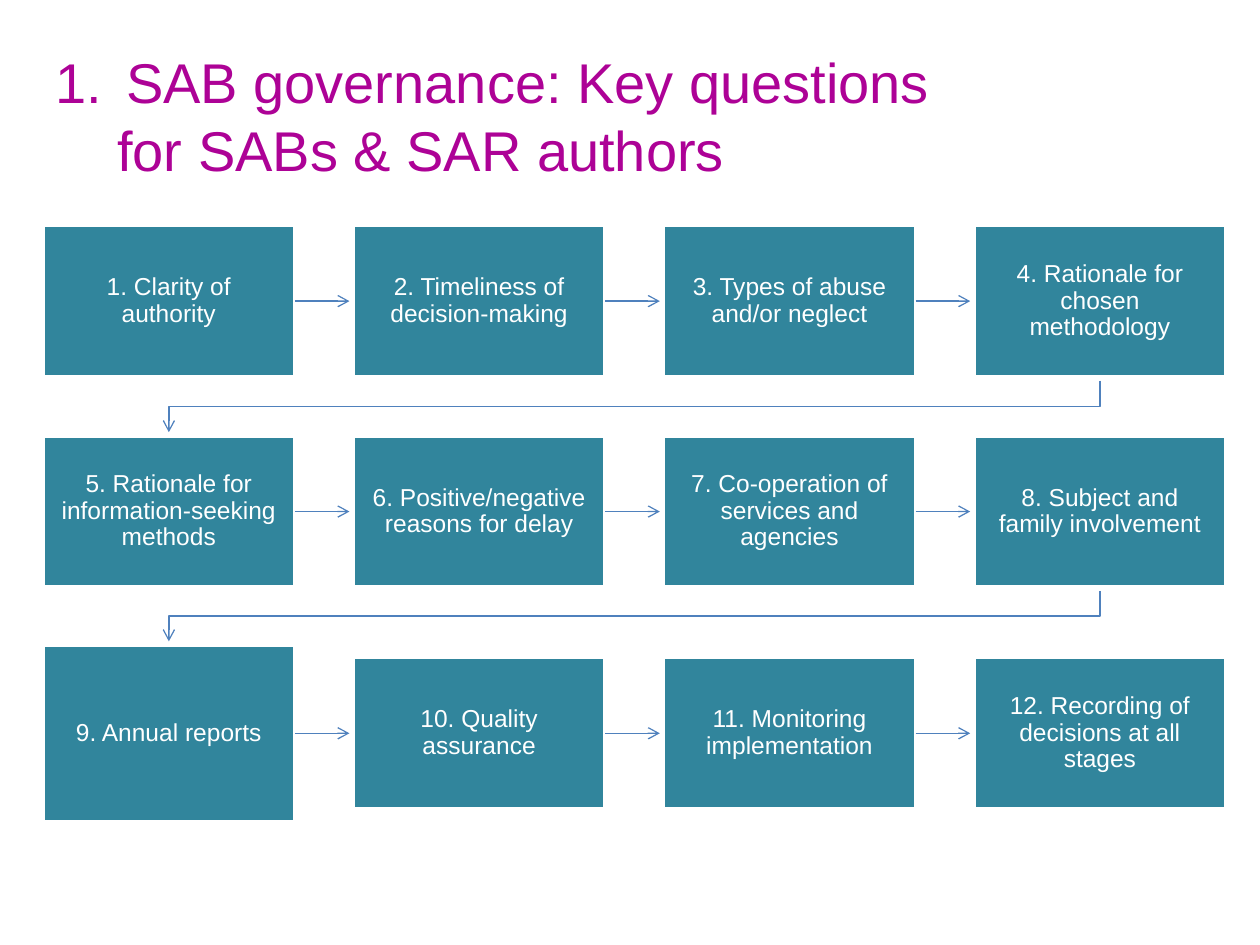
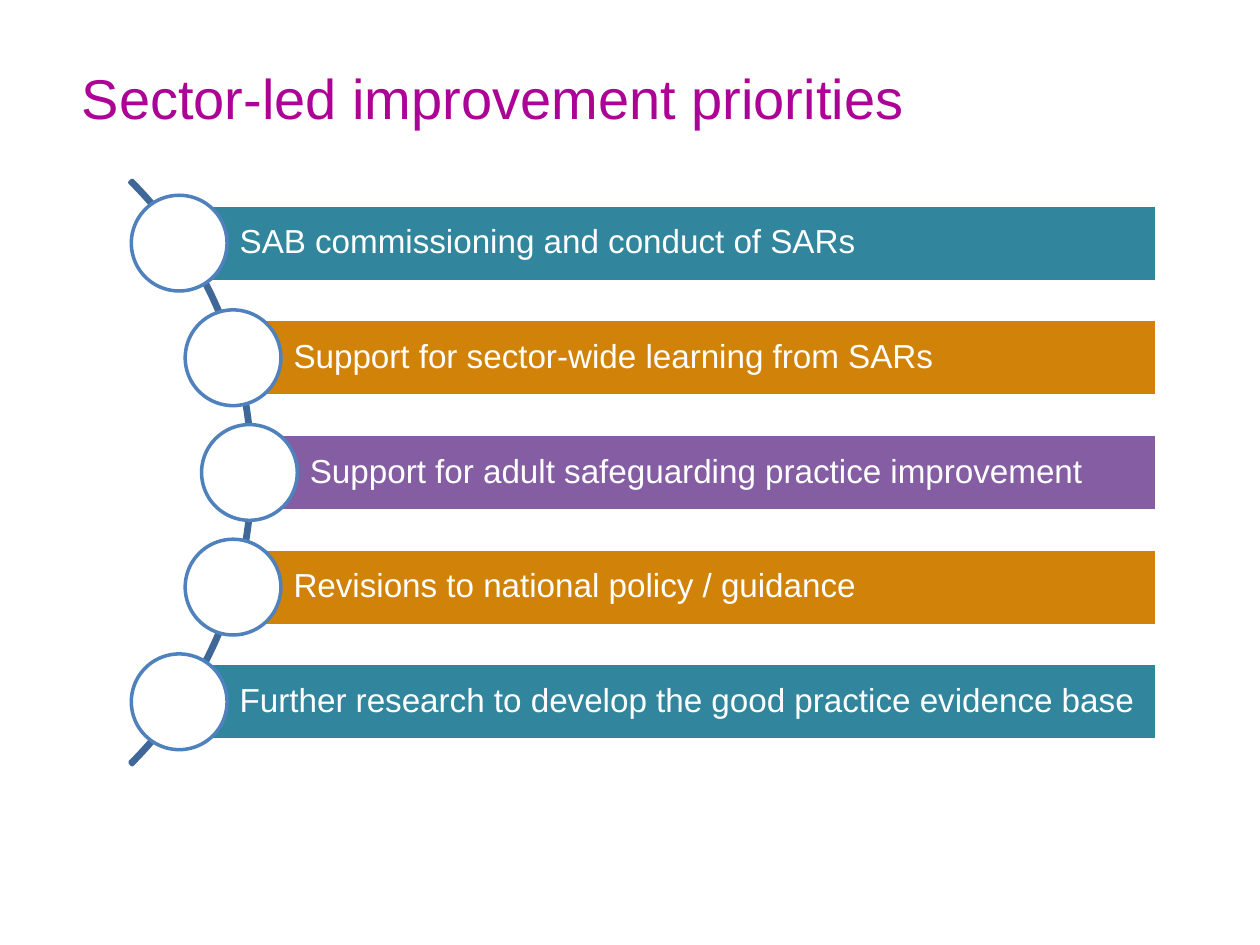
from math import sqrt
from lxml.etree import SubElement
from pptx import Presentation
from pptx.dml.color import RGBColor
from pptx.enum.shapes import MSO_CONNECTOR, MSO_SHAPE
from pptx.enum.text import MSO_ANCHOR, MSO_AUTO_SIZE, PP_ALIGN
from pptx.oxml.ns import qn
from pptx.util import Inches, Pt

FONT = "Arial"
WHITE, MAGENTA, BLUE, ARC_BLUE = "FFFFFF", "AD0296", "4F81BD", "3F6797"
TEAL, ORANGE, PURPLE = "31859C", "D18208", "845DA3"


def color(value):
    return RGBColor.from_string(value)


def style_text(paragraph, size, text_color, align=PP_ALIGN.LEFT, spacing=1.0):
    paragraph.alignment = align
    paragraph.line_spacing = spacing
    paragraph.font.name = FONT
    paragraph.font.size = Pt(size)
    paragraph.font.color.rgb = color(text_color)


deck = Presentation()
deck.slide_width, deck.slide_height = Inches(10), Inches(7.5)

titles = [
    ("SAB governance: Key questions\nfor SABs & SAR authors", 0.34, 0.33, 1.18),
    ("Sector-led improvement priorities", 0.55, 0.45, 0.64),
]
pages = []
for text, left, top, height in titles:
    page = deck.slides.add_slide(deck.slide_layouts[5])
    title = page.shapes.title
    title.left, title.top = Inches(left), Inches(top)
    title.width, title.height = Inches(8), Inches(height)
    frame = title.text_frame
    frame.text = text
    frame.word_wrap = True
    frame.auto_size = MSO_AUTO_SIZE.NONE
    frame.vertical_anchor = MSO_ANCHOR.TOP
    pages.append(page)

governance, priorities = pages

numbered, continued = governance.shapes.title.text_frame.paragraphs
properties = numbered._p.get_or_add_pPr()
properties.set("marL", str(Inches(0.56)))
properties.set("indent", str(Inches(-0.56)))
bullet_color = SubElement(properties, qn("a:buClr"))
SubElement(bullet_color, qn("a:srgbClr"), val=MAGENTA)
SubElement(properties, qn("a:buFont"), typeface=FONT)
SubElement(properties, qn("a:buAutoNum"), type="arabicPeriod")
continued._p.get_or_add_pPr().set("marL", str(Inches(0.49)))

for page in pages:
    for para in page.shapes.title.text_frame.paragraphs:
        style_text(para, 32, MAGENTA)

questions = [
    ["Clarity of authority", "Timeliness of decision-making",
     "Types of abuse and/or neglect", "Rationale for chosen methodology"],
    ["Rationale for information-seeking methods", "Positive/negative reasons for delay",
     "Co-operation of services and agencies", "Subject and family involvement"],
    ["Annual reports", "Quality assurance",
     "Monitoring implementation", "Recording of decisions at all stages"],
]
row_centers = [2.39, 4.06, 5.82]
first_left, column_step = 0.34, 7.39 / 3
box_width, box_height, tall_height = 2, 1.2, 1.4
arrow_gap = 0.03
arrows = []
last_row, last_column = len(questions) - 1, len(questions[0]) - 1

for row, (center, names) in enumerate(zip(row_centers, questions)):
    for column, name in enumerate(names):
        left = first_left + column * column_step
        height = tall_height if (row, column) == (last_row, 0) else box_height
        box = governance.shapes.add_shape(
            MSO_SHAPE.RECTANGLE, Inches(left), Inches(center - height / 2),
            Inches(box_width), Inches(height))
        box.shadow.inherit = False
        box.fill.solid()
        box.fill.fore_color.rgb = color(TEAL)
        box.line.color.rgb = color(WHITE)
        box.line.width = Pt(2)
        frame = box.text_frame
        frame.word_wrap = True
        frame.vertical_anchor = MSO_ANCHOR.MIDDLE
        frame.margin_left = frame.margin_right = Inches(0.11)
        frame.margin_top = frame.margin_bottom = Inches(0.11)
        frame.text = f"{row * len(names) + column + 1}. {name}"
        style_text(frame.paragraphs[0], 14, WHITE, PP_ALIGN.CENTER, 0.9)

        if column < last_column:
            arrow = governance.shapes.add_connector(
                MSO_CONNECTOR.STRAIGHT, Inches(left + box_width), Inches(center),
                Inches(left + column_step - arrow_gap), Inches(center))
            arrow.begin_connect(box, 3)
            SubElement(arrow._element.spPr, qn("a:effectLst"))
            arrows.append(arrow)

start_x = first_left + last_column * column_step + box_width / 2
end_x = first_left + box_width / 2
for row in range(last_row):
    bottom = row_centers[row] + box_height / 2
    next_height = tall_height if row + 1 == last_row else box_height
    next_top = row_centers[row + 1] - next_height / 2
    middle = (bottom + next_top) / 2
    outline = governance.shapes.build_freeform(
        Inches(start_x), Inches(bottom + arrow_gap))
    outline.add_line_segments(
        [(Inches(start_x), Inches(middle)), (Inches(end_x), Inches(middle)),
         (Inches(end_x), Inches(next_top - arrow_gap))], close=False)
    turn = outline.convert_to_shape()
    turn.shadow.inherit = False
    turn.fill.background()
    arrows.append(turn)

for arrow in arrows:
    arrow.line.color.rgb = color(BLUE)
    arrow.line.width = Pt(0.75)
    SubElement(arrow.line._get_or_add_ln(), qn("a:tailEnd"), type="arrow")

arc_x, arc_y, arc_radius, node_orbit = -1.27, 3.75, 3.28, 3.25
arc = priorities.shapes.add_shape(
    MSO_SHAPE.BLOCK_ARC, Inches(arc_x - arc_radius), Inches(arc_y - arc_radius),
    Inches(2 * arc_radius), Inches(2 * arc_radius))
for index, value in enumerate([189, 27, 0.004]):
    arc.adjustments[index] = value
arc.shadow.inherit = False
arc.fill.background()
arc.line.color.rgb = color(ARC_BLUE)
arc.line.width = Pt(2)

bars = [
    ("SAB commissioning and conduct of SARs", TEAL),
    ("Support for sector-wide learning from SARs", ORANGE),
    ("Support for adult safeguarding practice improvement", PURPLE),
    ("Revisions to national policy / guidance", ORANGE),
    ("Further research to develop the good practice evidence base", TEAL),
]
bar_right, bar_height, bar_step, node_size = 9.18, 0.61, 0.91, 0.76
for index, (text, bar_color) in enumerate(bars):
    offset = (index - len(bars) // 2) * bar_step
    node_x = arc_x + sqrt(node_orbit ** 2 - offset ** 2)
    node_y = arc_y + offset
    bar = priorities.shapes.add_shape(
        MSO_SHAPE.RECTANGLE, Inches(node_x), Inches(node_y - bar_height / 2),
        Inches(bar_right - node_x), Inches(bar_height))
    node = priorities.shapes.add_shape(
        MSO_SHAPE.OVAL, Inches(node_x - node_size / 2), Inches(node_y - node_size / 2),
        Inches(node_size), Inches(node_size))
    for shape, fill, line in [(bar, bar_color, WHITE), (node, WHITE, BLUE)]:
        shape.shadow.inherit = False
        shape.fill.solid()
        shape.fill.fore_color.rgb = color(fill)
        shape.line.color.rgb = color(line)
        shape.line.width = Pt(2)
    frame = bar.text_frame
    frame.word_wrap = True
    frame.vertical_anchor = MSO_ANCHOR.MIDDLE
    frame.margin_left = Inches(0.48)
    frame.margin_right = frame.margin_top = frame.margin_bottom = Inches(0.05)
    frame.text = text
    style_text(frame.paragraphs[0], 19, WHITE, spacing=0.9)

deck.save("out.pptx")
